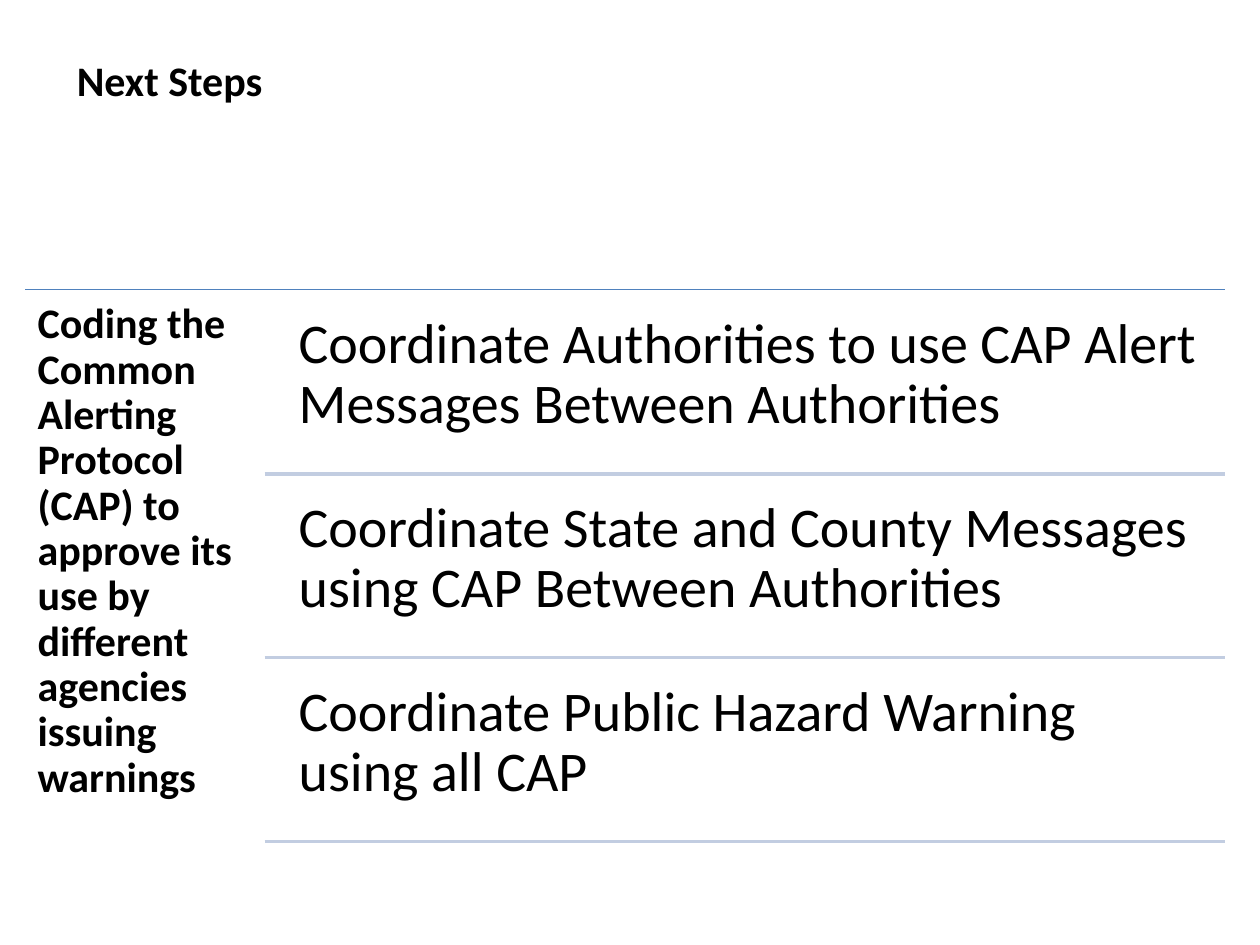
import pptx
import pptx.dml.color
import pptx.enum.shapes
import pptx.enum.text
import pptx.oxml.ns
import pptx.util
from lxml import etree
from pptx.util import Inches

FONT = "Calibri"
RULE_LEFT, RIGHT = 2.1, 9.72
TOP = 2.3
STEP_LEFT, STEP_HEIGHT = 2.24, 1.39
GAP = 0.07
STEPS = [
    "Coordinate Authorities to use CAP Alert Messages Between Authorities",
    "Coordinate State and County Messages using CAP Between Authorities",
    "Coordinate Public Hazard Warning using all CAP",
]


def write(holder, text, left, top, width, height, size, bold=False, inset=0.1,
          spacing=0.9, wrap=True, anchor="TOP"):
    """Place a text box or placeholder and fill it with one formatted paragraph."""
    holder.left, holder.top = Inches(left), Inches(top)
    holder.width, holder.height = Inches(width), Inches(height)
    frame = holder.text_frame
    frame.auto_size = pptx.enum.text.MSO_AUTO_SIZE.NONE
    frame.word_wrap = wrap
    frame.vertical_anchor = pptx.enum.text.MSO_ANCHOR[anchor]
    frame.margin_left = frame.margin_right = Inches(inset)
    frame.margin_top = frame.margin_bottom = Inches(inset)
    paragraph = frame.paragraphs[0]
    paragraph.text = text
    paragraph.alignment = pptx.enum.text.PP_ALIGN.LEFT
    paragraph.line_spacing = spacing
    font = paragraph.runs[0].font
    font.name, font.size, font.bold = FONT, pptx.util.Pt(size), bold
    font.color.rgb = pptx.dml.color.RGBColor.from_string("000000")


def add_rule(left, y, color, weight):
    """Draw a horizontal line from left to the right edge of the content."""
    rule = slide.shapes.add_connector(
        pptx.enum.shapes.MSO_CONNECTOR.STRAIGHT,
        Inches(left), Inches(y), Inches(RIGHT), Inches(y))
    rule.line.color.rgb = pptx.dml.color.RGBColor.from_string(color)
    rule.line.width = pptx.util.Pt(weight)
    etree.SubElement(rule.line._get_or_add_ln().getparent(),
                     pptx.oxml.ns.qn("a:effectLst"))


deck = pptx.Presentation()
deck.slide_width, deck.slide_height = Inches(10), Inches(7.5)
slide = deck.slides.add_slide(deck.slide_layouts.get_by_name("Title Only"))

write(slide.shapes.title, "Next Steps", 0.51, 0.21, 1.69, 0.64, size=24,
      bold=True, spacing=1.5, wrap=False, anchor="MIDDLE")

add_rule(0.2, TOP, "4F81BD", 0.75)
goal = slide.shapes.add_textbox(0, 0, 0, 0)
write(goal, "Coding the Common Alerting Protocol (CAP) to approve its use by "
      "different agencies issuing warnings", 0.2, TOP, 1.91, 4.44, size=24, bold=True)

for index, step_text in enumerate(STEPS):
    step_top = TOP + GAP + index * (STEP_HEIGHT + GAP)
    step = slide.shapes.add_textbox(0, 0, 0, 0)
    write(step, step_text, STEP_LEFT, step_top, RIGHT - STEP_LEFT, STEP_HEIGHT,
          size=32, inset=0.13)
    add_rule(RULE_LEFT, step_top + STEP_HEIGHT, "C2CDE1", 2)

deck.save("out.pptx")
